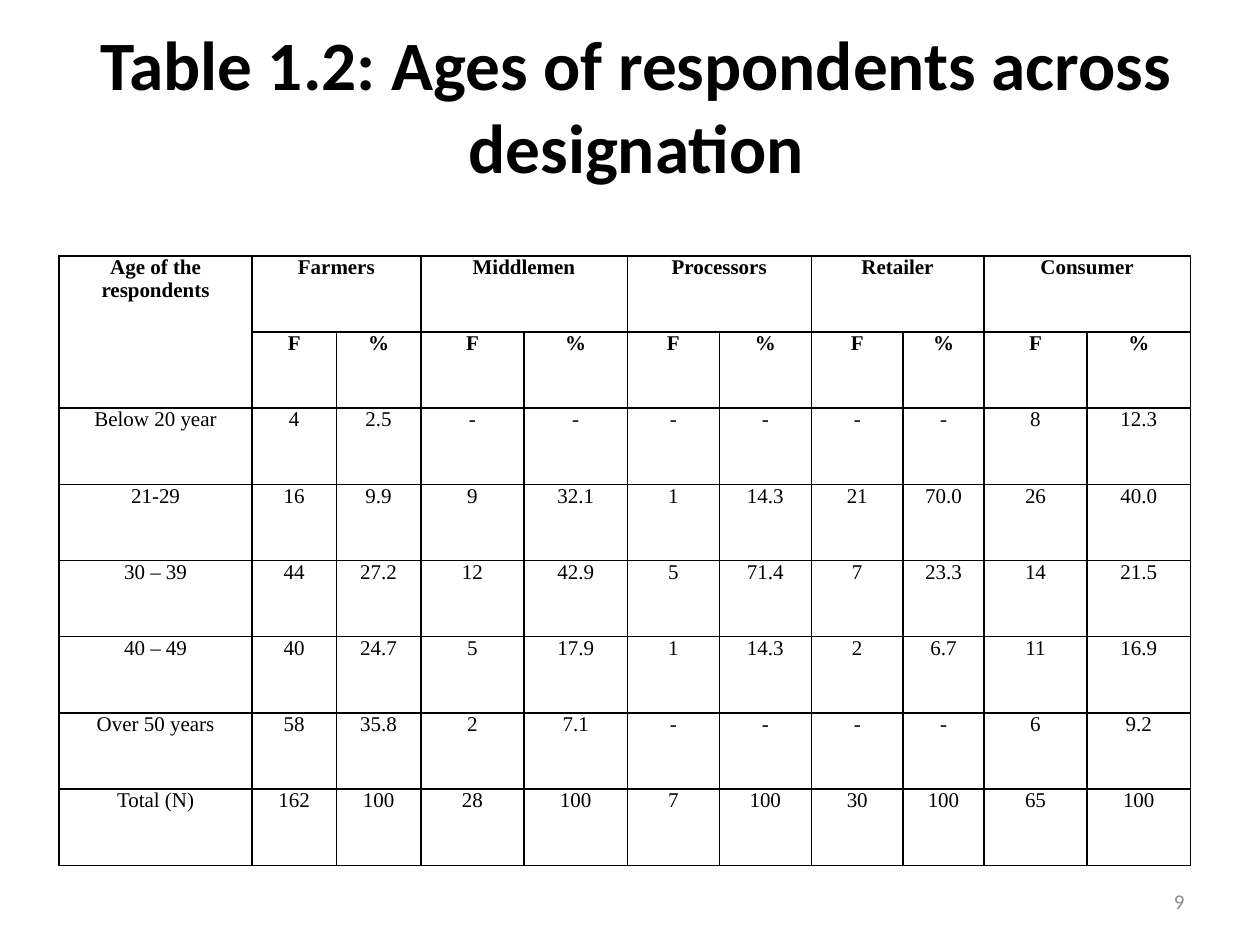
from lxml.etree import SubElement
from pptx import Presentation
from pptx.dml.color import RGBColor
from pptx.enum.text import MSO_ANCHOR, PP_ALIGN
from pptx.oxml.ns import qn
from pptx.util import Inches, Pt

TITLE = "Table 1.2: Ages of respondents across designation"
PAGE_NUMBER = "9"
AGE_HEADING = "Age of the respondents"
GROUPS = ["Farmers", "Middlemen", "Processors", "Retailer", "Consumer"]
MEASURES = ["F", "%"]
AGE_ROWS = [
    ("Below 20 year", "4", "2.5", "-", "-", "-", "-", "-", "-", "8", "12.3"),
    ("21-29", "16", "9.9", "9", "32.1", "1", "14.3", "21", "70.0", "26", "40.0"),
    ("30 – 39", "44", "27.2", "12", "42.9", "5", "71.4", "7", "23.3", "14", "21.5"),
    ("40 – 49", "40", "24.7", "5", "17.9", "1", "14.3", "2", "6.7", "11", "16.9"),
    ("Over 50 years", "58", "35.8", "2", "7.1", "-", "-", "-", "-", "6", "9.2"),
    ("Total (N)", "162", "100", "28", "100", "7", "100", "30", "100", "65", "100"),
]
COLUMN_WIDTHS = [1.53, 0.67, 0.67, 0.82, 0.82, 0.73, 0.73, 0.73, 0.64, 0.82, 0.82]
TABLE_LEFT, TABLE_TOP, TABLE_HEIGHT = 0.47, 2.03, 4.84
BLACK, GREY = "000000", "8C8C8C"


def colour(value):
    return RGBColor.from_string(value)


def write(frame, text, size=12, font="Times New Roman", ink=BLACK, bold=False,
          align=PP_ALIGN.CENTER):
    paragraph = frame.paragraphs[0]
    paragraph.alignment = align
    run = paragraph.add_run()
    run.text = text
    run.font.size, run.font.name, run.font.bold = Pt(size), font, bold
    run.font.color.rgb = colour(ink)


def add_text(slide, box, text, bottom_inset=0.05, **style):
    frame = slide.shapes.add_textbox(*map(Inches, box)).text_frame
    frame.word_wrap = True
    frame.vertical_anchor = MSO_ANCHOR.MIDDLE
    frame.margin_bottom = Inches(bottom_inset)
    write(frame, text, font="Calibri", **style)


def outline(cell, width=1):
    properties = cell._tc.get_or_add_tcPr()
    for side in ("a:lnL", "a:lnR", "a:lnT", "a:lnB"):
        line = SubElement(properties, qn(side), w=str(Pt(width)))
        fill = SubElement(line, qn("a:solidFill"))
        SubElement(fill, qn("a:srgbClr"), val=BLACK)


def add_age_table(slide):
    group_size = len(MEASURES)
    row_count = 2 + len(AGE_ROWS)
    table = slide.shapes.add_table(
        row_count, len(COLUMN_WIDTHS), Inches(TABLE_LEFT), Inches(TABLE_TOP),
        Inches(sum(COLUMN_WIDTHS)), Inches(TABLE_HEIGHT)).table
    table.first_row = table.horz_banding = False
    for column, width in zip(table.columns, COLUMN_WIDTHS):
        column.width = Inches(width)
    for row in table.rows:
        row.height = Inches(TABLE_HEIGHT / row_count)

    for cell in table.iter_cells():
        outline(cell)
        cell.fill.background()
        cell.margin_left = cell.margin_right = Inches(0.07)
        cell.margin_top = cell.margin_bottom = 0

    table.cell(0, 0).merge(table.cell(1, 0))
    write(table.cell(0, 0).text_frame, AGE_HEADING, bold=True)
    for index, group in enumerate(GROUPS):
        first = 1 + index * group_size
        table.cell(0, first).merge(table.cell(0, first + group_size - 1))
        write(table.cell(0, first).text_frame, group, bold=True)
        for offset, measure in enumerate(MEASURES):
            write(table.cell(1, first + offset).text_frame, measure, bold=True)
    for r, values in enumerate(AGE_ROWS, start=2):
        for c, value in enumerate(values):
            write(table.cell(r, c).text_frame, value)


def main():
    deck = Presentation()
    deck.slide_width, deck.slide_height = Inches(10), Inches(7.5)
    slide = deck.slides.add_slide(deck.slide_layouts[6])
    # The deep bottom inset lifts the two title lines clear of the table.
    add_text(slide, (0.55, 0.62, 9, 1.02), TITLE, bottom_inset=0.65,
             size=39.6, bold=True)
    add_age_table(slide)
    add_text(slide, (7.17, 6.95, 2.33, 0.4), PAGE_NUMBER, ink=GREY,
             align=PP_ALIGN.RIGHT)
    deck.save("out.pptx")


if __name__ == "__main__":
    main()
